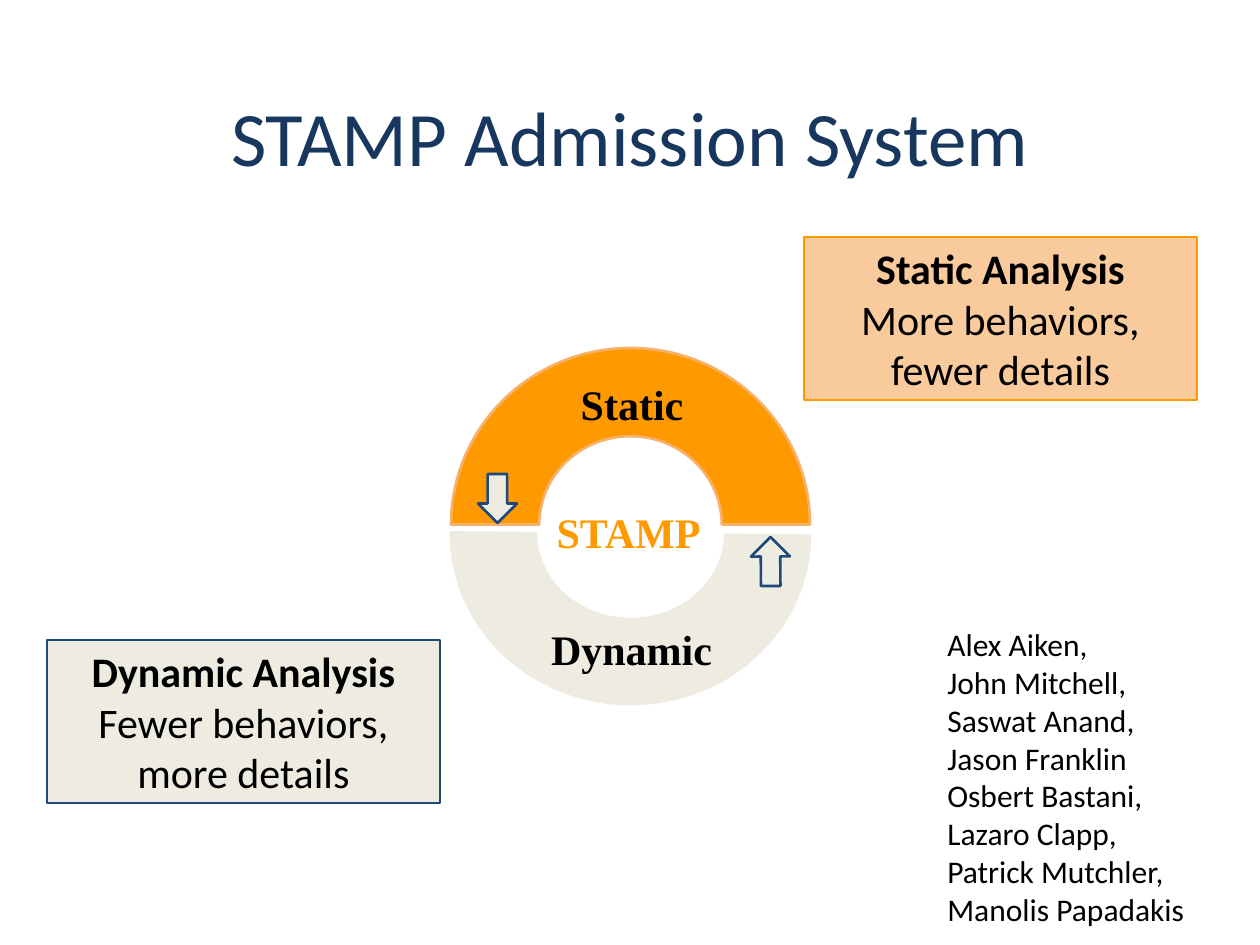
from pptx import Presentation, util as u
from pptx.dml.color import RGBColor
from pptx.enum import shapes, text

PX_PER_INCH = 126
SANS, SERIF = "Calibri", "Times New Roman"
COLORS = {
    "title": "17375E",
    "ink": "000000",
    "orange": "FF9900",
    "peach": "F9CB9C",
    "apricot": "F6B26B",
    "ivory": "EEECE1",
    "navy": "1F497D",
}
TEAM = [
    "Alex Aiken,", "John Mitchell,", "Saswat Anand,", "Jason Franklin",
    "Osbert Bastani,", "Lazaro Clapp,", "Patrick Mutchler,", "Manolis Papadakis",
]


def px(length):
    return u.Inches(length / PX_PER_INCH)


def color(name):
    return RGBColor.from_string(COLORS[name])


class Page:
    def __init__(self, deck):
        self.slide = deck.slides.add_slide(deck.slide_layouts[6])

    def add_lines(self, frame, lines, size, font, ink="ink", bold_lines=0,
                  align=text.PP_ALIGN.CENTER):
        """Put one line in each paragraph; the first bold_lines are bold."""
        for index, line in enumerate(lines):
            para = frame.add_paragraph() if index else frame.paragraphs[0]
            para.alignment = align
            span = para.add_run()
            span.text = line
            span.font.name = font
            span.font.size = u.Pt(size)
            span.font.bold = index < bold_lines
            span.font.color.rgb = color(ink)

    def pad(self, frame, inset=13):
        frame.margin_left = frame.margin_right = px(inset)
        frame.margin_top = frame.margin_bottom = px(inset)
        frame.word_wrap = True

    def text_box(self, area):
        return self.slide.shapes.add_textbox(*map(px, area)).text_frame

    def title(self, area, words):
        frame = self.text_box(area)
        self.pad(frame)
        frame.vertical_anchor = text.MSO_ANCHOR.BOTTOM
        self.add_lines(frame, [words], 44, SANS, "title")

    def label(self, area, words, ink="ink"):
        frame = self.text_box(area)
        self.pad(frame)
        self.add_lines(frame, [words], 24, SERIF, ink, bold_lines=1)

    def name_list(self, area, names):
        frame = self.text_box(area)
        frame.word_wrap = False
        frame.auto_size = text.MSO_AUTO_SIZE.SHAPE_TO_FIT_TEXT
        self.add_lines(frame, names, 18, SANS, align=text.PP_ALIGN.LEFT)

    def shape(self, kind, area, fill, line, adjustments, rotation=0):
        shape = self.slide.shapes.add_shape(kind, *map(px, area))
        shape.shadow.inherit = False
        shape.rotation = rotation
        shape.fill.solid()
        shape.fill.fore_color.rgb = color(fill)
        shape.line.color.rgb = color(line)
        shape.line.width = u.Pt(1.5)
        for index, value in enumerate(adjustments):
            shape.adjustments[index] = value
        return shape

    def half_ring(self, area, fill, line, rotation=0):
        # The first value is an angle: 108 stands for 180 degrees
        self.shape(shapes.MSO_SHAPE.BLOCK_ARC, area, fill, line,
                   (108, 0, 0.25), rotation)

    def arrow(self, left, top, rotation=0):
        self.shape(shapes.MSO_SHAPE.DOWN_ARROW, (left, top, 39, 49),
                   "ivory", "navy", (0.5, 0.5), rotation)

    def callout(self, left, top, fill, line, tip, heading, detail):
        box = self.shape(shapes.MSO_SHAPE.ROUNDED_RECTANGULAR_CALLOUT,
                         (left, top, 393, 163), fill, line, (*tip, 0))
        frame = box.text_frame
        self.pad(frame)
        frame.vertical_anchor = text.MSO_ANCHOR.MIDDLE
        self.add_lines(frame, [heading, detail], 24, SANS, bold_lines=1)


def main():
    deck = Presentation()
    deck.slide_width, deck.slide_height = u.Inches(10), u.Inches(7.5)
    page = Page(deck)

    page.title((63, 38, 1134, 157), "STAMP Admission System")

    page.half_ring((451, 348, 359, 353), "orange", "apricot")
    page.half_ring((451, 364, 359, 340), "ivory", "ivory", rotation=180.5)
    page.label((548, 365, 168, 72), "Static")
    page.label((528, 610, 207, 72), "Dynamic")
    page.label((517, 494, 223, 81), "STAMP", "orange")
    page.arrow(478, 474)
    page.arrow(751, 537, rotation=179.6)

    page.callout(804, 237, "peach", "orange", (-0.25, 0.5),
                 "Static Analysis", "More behaviors, fewer details")
    page.callout(47, 640, "ivory", "navy", (0.5, -0.23),
                 "Dynamic Analysis", "Fewer behaviors, more details")
    page.name_list((935, 619, 265, 318), TEAM)

    deck.save("out.pptx")


if __name__ == "__main__":
    main()
